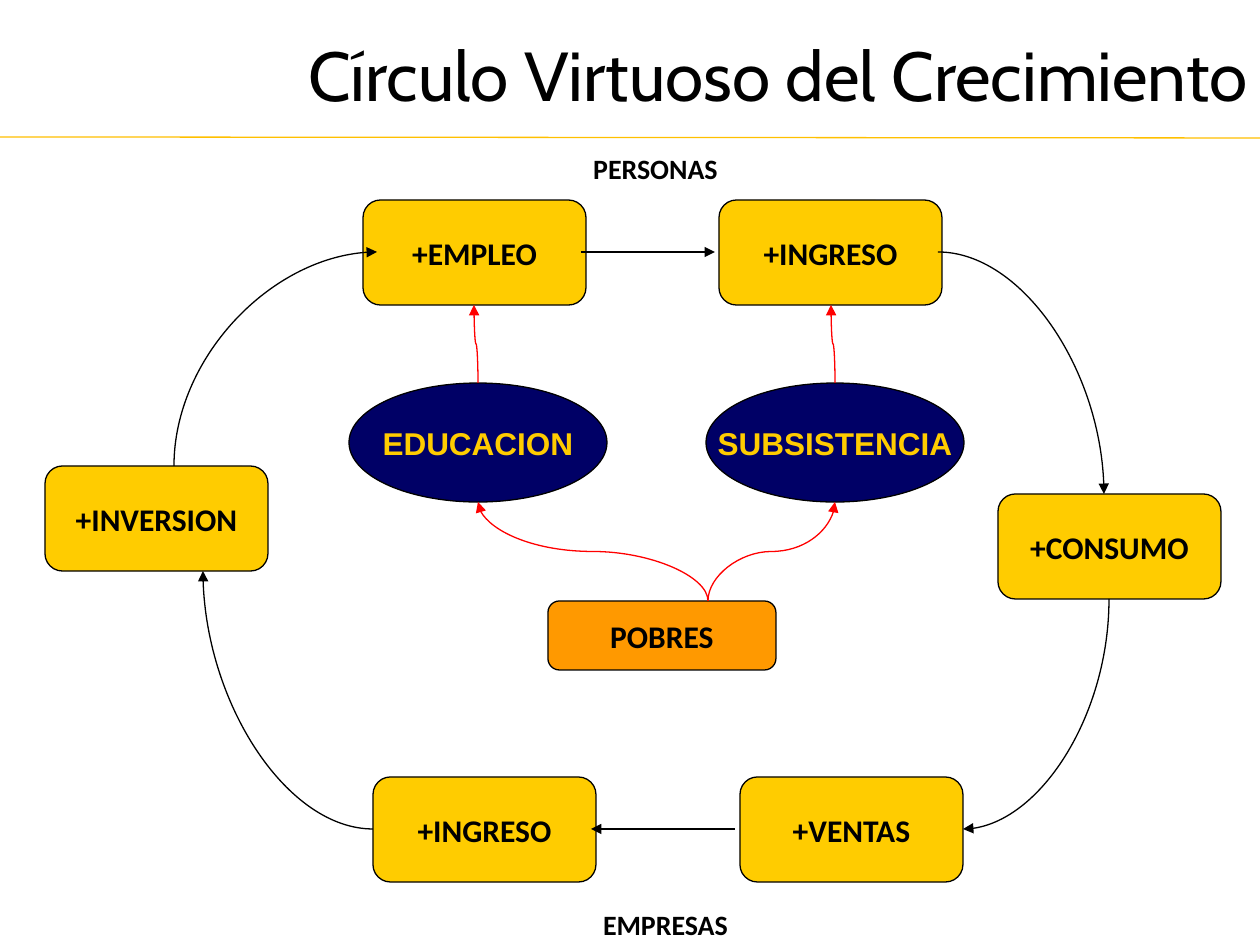
"""Build the slide showing the virtuous circle of growth."""
from dataclasses import dataclass

from lxml import etree
from pptx import Presentation
from pptx.dml.color import RGBColor
from pptx.enum.shapes import MSO_CONNECTOR, MSO_SHAPE
from pptx.enum.text import MSO_ANCHOR, MSO_AUTO_SIZE, PP_ALIGN
from pptx.oxml.ns import qn
from pptx.util import Emu, Pt

EMU_PER_PX = 914400 / 126
BLACK = RGBColor(0x00, 0x00, 0x00)
RED = RGBColor(0xFF, 0x00, 0x00)
GOLD = RGBColor(0xFF, 0xCC, 0x00)
AMBER = RGBColor(0xFF, 0xC0, 0x00)
ORANGE = RGBColor(0xFF, 0x99, 0x00)
NAVY = RGBColor(0x00, 0x00, 0x66)
ROUNDED, OVAL = MSO_SHAPE.ROUNDED_RECTANGLE, MSO_SHAPE.OVAL
STRAIGHT, CURVE = MSO_CONNECTOR.STRAIGHT, MSO_CONNECTOR.CURVE
CENTER, RIGHT = PP_ALIGN.CENTER, PP_ALIGN.RIGHT
MIDDLE = MSO_ANCHOR.MIDDLE
NO_FIT = MSO_AUTO_SIZE.NONE


@dataclass(frozen=True)
class Node:
    """A labelled shape of the diagram."""
    text: str
    left: int
    top: int
    width: int = 223
    height: int = 105
    kind: int = ROUNDED
    fill: RGBColor = GOLD
    color: RGBColor = BLACK
    font: str = "Calibri"


@dataclass(frozen=True)
class Arrow:
    """A connector between two points; preset names a curve's geometry."""
    start: tuple[int, int]
    end: tuple[int, int]
    preset: str = ""
    vertical: bool = False
    color: RGBColor = BLACK
    head: bool = True


OVAL_STYLE = dict(width=258, height=119, kind=OVAL, fill=NAVY, color=GOLD, font="Arial")
NODES = [
    Node("+INVERSION", 45, 466),
    Node("+EMPLEO", 363, 200),
    Node("+INGRESO", 719, 200),
    Node("+CONSUMO", 998, 494),
    Node("+INGRESO", 373, 777),
    Node("+VENTAS", 740, 777),
    Node("POBRES", 548, 601, 228, 69, fill=ORANGE),
    Node("EDUCACION", 349, 383, **OVAL_STYLE),
    Node("SUBSISTENCIA", 706, 383, **OVAL_STYLE),
]
QUARTER, S_CURVE = "curvedConnector2", "curvedConnector3"
RULE = Arrow((0, 137), (1260, 138), color=AMBER, head=False)
CYCLE = [
    Arrow((174, 466), (377, 252), QUARTER, vertical=True),
    Arrow((581, 252), (715, 252)),
    Arrow((938, 252), (1104, 494), QUARTER),
    Arrow((1109, 599), (963, 829), QUARTER, vertical=True),
    Arrow((735, 829), (591, 829)),
    Arrow((373, 829), (203, 571), QUARTER),
]
SUPPORT = [
    Arrow(start, end, S_CURVE, vertical=True, color=RED)
    for start, end in [
        ((478, 383), (474, 305)),
        ((835, 383), (831, 305)),
        ((708, 601), (478, 502)),
        ((708, 601), (835, 502)),
    ]
]
CAPTIONS = [("PERSONAS", 561, 147), ("EMPRESAS", 571, 903)]


def px(*lengths: float) -> list[Emu]:
    """Turn px lengths into EMU."""
    return [Emu(round(length * EMU_PER_PX)) for length in lengths]


def write(shape, text: str, *, size: float, color: RGBColor = BLACK, font: str = "Calibri",
          bold: bool = True, align=CENTER, wrap: bool = False) -> None:
    """Put one formatted paragraph into a shape."""
    frame = shape.text_frame
    frame.auto_size = NO_FIT
    frame.word_wrap = wrap
    frame.vertical_anchor = MIDDLE
    para = frame.paragraphs[0]
    para.alignment = align
    span = para.add_run()
    span.text = text
    span.font.size = Pt(size)
    span.font.name = font
    span.font.bold = bold
    span.font.color.rgb = color


def draw_node(slide, node: Node) -> None:
    """Draw one labelled shape."""
    box = slide.shapes.add_shape(node.kind, *px(node.left, node.top, node.width, node.height))
    box.shadow.inherit = False
    box.fill.solid()
    box.fill.fore_color.rgb = node.fill
    box.line.color.rgb = BLACK
    box.line.width = Pt(0.75)
    write(box, node.text, size=18, color=node.color, font=node.font)


def draw_arrow(slide, arrow: Arrow) -> None:
    """Draw a connector, turning it a quarter when its curve leaves vertically."""
    (x1, y1), (x2, y2) = arrow.start, arrow.end
    turn = 0
    if arrow.vertical:
        across, down = x2 - x1, y2 - y1
        turn = 270 if across < 0 and down < 0 else 90
        sign = 1 if turn == 90 else -1
        middle_x, middle_y = (x1 + x2) / 2, (y1 + y2) / 2
        half_x, half_y = sign * down / 2, -sign * across / 2
        x1, x2 = middle_x - half_x, middle_x + half_x
        y1, y2 = middle_y - half_y, middle_y + half_y
    kind = CURVE if arrow.preset else STRAIGHT
    link = slide.shapes.add_connector(kind, *px(x1, y1, x2, y2))
    link.line.color.rgb = arrow.color
    link.line.width = Pt(0.75)
    properties = link._element.spPr
    if turn:
        properties.find(qn("a:xfrm")).set("rot", str(turn * 60000))
    if arrow.preset:
        properties.find(qn("a:prstGeom")).set("prst", arrow.preset)
    if arrow.head:
        etree.SubElement(properties.find(qn("a:ln")), qn("a:tailEnd"),
                         type="triangle", w="med", len="med")
    etree.SubElement(properties, qn("a:effectLst"))


def main() -> None:
    """Build and save the deck."""
    deck = Presentation()
    deck.slide_width, deck.slide_height = px(1260, 945)
    page = deck.slides.add_slide(deck.slide_layouts[5])
    title = page.shapes.title
    title.left, title.top, title.width, title.height = px(256, 0, 1004, 147)
    write(title, "Círculo Virtuoso del Crecimiento", size=39.6, font="Cabin",
          bold=False, align=RIGHT, wrap=True)
    draw_arrow(page, RULE)
    for node in NODES:
        draw_node(page, node)
    for arrow in CYCLE + SUPPORT:
        draw_arrow(page, arrow)
    for text, left, top in CAPTIONS:
        write(page.shapes.add_textbox(*px(left, top, 189, 42)), text, size=16)
    deck.save("out.pptx")


if __name__ == "__main__":
    main()
